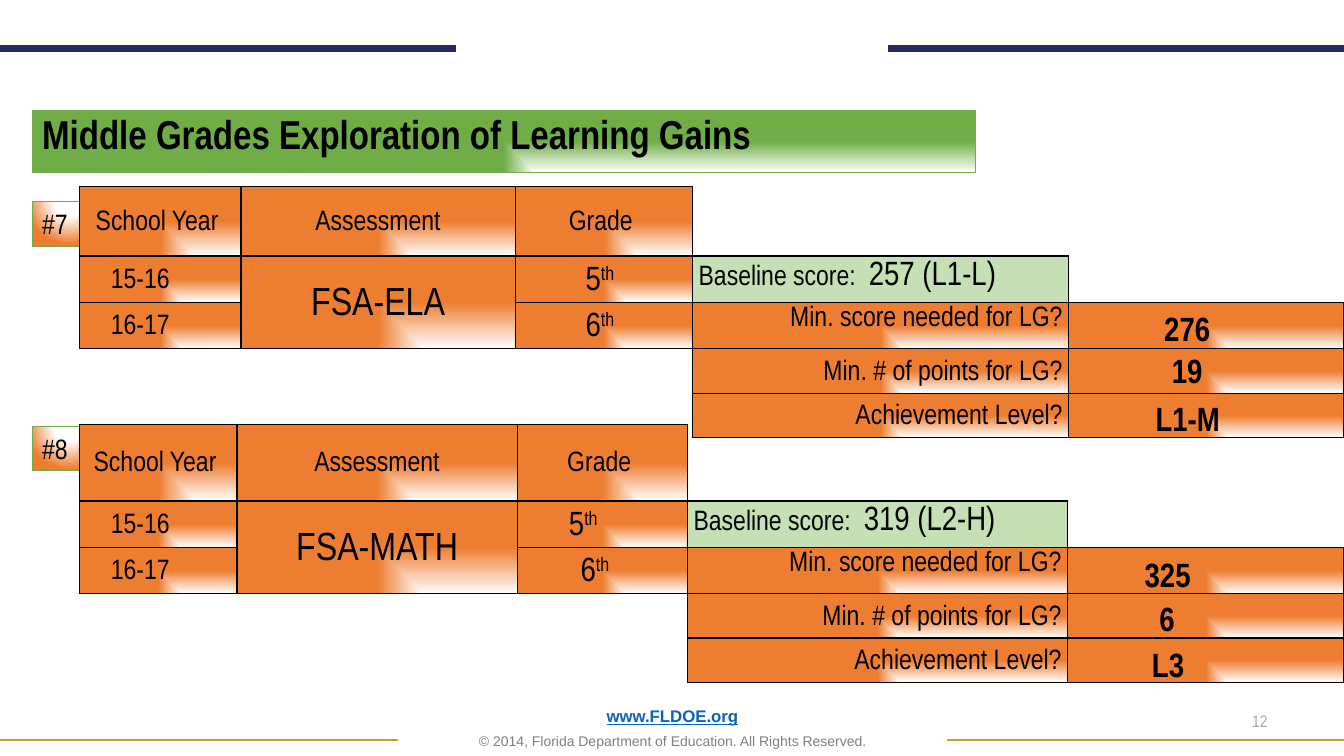
from lxml import etree
from pptx import Presentation
from pptx.dml.color import RGBColor
from pptx.enum import shapes, text
from pptx.oxml import parse_xml
from pptx.oxml.ns import nsdecls, qn
from pptx.util import Inches, Pt

COLORS = {
    "black": "000000", "white": "FFFFFF", "orange": "ED7D31", "green": "70AD47",
    "pale_green": "C5E0B4", "navy": "262A63", "gold": "CD9D2C",
    "link": "0563C1", "gray": "808080", "light_gray": "A6A6A6",
}
LEFT, CENTER, RIGHT = text.PP_ALIGN.LEFT, text.PP_ALIGN.CENTER, text.PP_ALIGN.RIGHT
TOP, MIDDLE = text.MSO_ANCHOR.TOP, text.MSO_ANCHOR.MIDDLE
CORNER = 'path="rect"', 0, 'l="100000" t="100000"'
GLOW = 'path="circle"', 35000, 'l="50000" t="-80000" r="50000" b="180000"'


def write(p, words, size=20, font="Arial Narrow", color="black", bold=False,
          underline=False, align=LEFT, spacing=1.0, superscript=False):
    """Append one formatted run to the paragraph."""
    p.alignment, p.line_spacing = align, spacing
    r = p.add_run()
    r.text = words
    r.font.name, r.font.size = font, Pt(size)
    r.font.bold, r.font.underline = bold, underline
    r.font.color.rgb = RGBColor.from_string(COLORS[color])
    if superscript:
        r.font._element.set("baseline", "30000")


def add_gradient(parent, color, style):
    """Append a path gradient that runs from white to the colour."""
    kind, white_end, focus = style
    stops = "".join(
        f'<a:gs pos="{pos}"><a:srgbClr val="{COLORS[name]}"/></a:gs>'
        for pos, name in ((0, "white"), (white_end, "white"), (100000, color)))
    parent.append(parse_xml(
        f'<a:gradFill {nsdecls("a")} rotWithShape="1"><a:gsLst>{stops}</a:gsLst>'
        f'<a:path {kind}><a:fillToRect {focus}/></a:path></a:gradFill>'))


prs = Presentation()
prs.slide_width, prs.slide_height = Inches(13.33), Inches(7.5)
s = prs.slides.add_slide(prs.slide_layouts[6])

# Rules at the top and bottom
for x1, x2, y, color, width in (
        (0, 3.95, 7.34, "gold", 1), (0, 4.52, 0.48, "navy", 5),
        (8.81, 13.33, 0.48, "navy", 5), (9.39, 13.33, 7.34, "gold", 1)):
    rule = s.shapes.add_connector(shapes.MSO_CONNECTOR.STRAIGHT,
                                  Inches(x1), Inches(y), Inches(x2), Inches(y))
    rule.line.color.rgb = RGBColor.from_string(COLORS[color])
    rule.line.width = Pt(width)
    etree.SubElement(rule._element.spPr, qn("a:effectLst"))

# Footer and page number
tf = s.shapes.add_textbox(Inches(0.92), Inches(7.06), Inches(11.5), Inches(0.43)).text_frame
tf.word_wrap, tf.vertical_anchor = True, text.MSO_ANCHOR.BOTTOM
write(tf.paragraphs[0], "www.FLDOE.org", size=12, font="Arial", color="link",
      bold=True, underline=True, align=CENTER, spacing=0.9)
p = tf.add_paragraph()
p.space_before = Pt(6)
write(p, "© 2014, Florida Department of Education. All Rights Reserved.",
      size=10, font="Arial", color="gray", align=CENTER, spacing=0.9)

tf = s.shapes.add_textbox(Inches(9.56), Inches(6.95), Inches(3.11), Inches(0.4)).text_frame
tf.word_wrap, tf.vertical_anchor = True, MIDDLE
write(tf.paragraphs[0], "12", size=12, color="light_gray", align=RIGHT)

# Title bar and problem numbers
for words, y, width, height, color, style, line, fmt in (
        ("Middle Grades Exploration of Learning Gains", 1.09, 9.35, 0.62, "green", CORNER,
         0.5, dict(size=28.8, bold=True, spacing=0.9)),
        ("#7", 2, 0.73, 0.44, "orange", GLOW, 0.5, {}),
        ("#8", 4.23, 0.73, 0.44, "orange", GLOW, 0.75, {})):
    sp = s.shapes.add_shape(shapes.MSO_SHAPE.RECTANGLE, Inches(0.32), Inches(y),
                            Inches(width), Inches(height))
    add_gradient(sp._element.spPr, color, style)
    sp.line.color.rgb = RGBColor.from_string(COLORS["green"])
    sp.line.width = Pt(line)
    sp.shadow.inherit = False
    sp.text_frame.word_wrap, sp.text_frame.vertical_anchor = True, TOP
    write(sp.text_frame.paragraphs[0], words, **fmt)

# One table per problem, with its answers laid over the last column
problems = (
    dict(top=1.85, header=0.69, cols=(1.6, 2.72, 1.76, 3.73, 2.73), subject="FSA-ELA",
         baseline="257 (L1-L)", grade_margins=(0.14, 0.14),
         answers=(("276", 11.21, 3.01, 1.13), ("19", 11.21, 3.42, 1.13),
                  ("L1-M", 11.29, 3.9, 0.98))),
    dict(top=4.21, header=0.76, cols=(1.56, 2.78, 1.69, 3.77, 2.74), subject="FSA-MATH",
         baseline="319 (L2-H)", grade_margins=(0.44, 0.21),
         answers=(("325", 11.09, 5.45, 0.98), ("6", 11.01, 5.88, 1.13),
                  ("L3", 11.13, 6.34, 0.91))),
)
EMPTY = {(0, 3), (0, 4), (1, 4)} | {(row, col) for row in (3, 4) for col in range(3)}
NO_STYLE = "{2D5ABB26-0587-4C30-8999-92F81FD0307C}"

for problem in problems:
    heights = (problem["header"], 0.46, 0.46, 0.44, 0.44)
    table = s.shapes.add_table(5, 5, Inches(0.79), Inches(problem["top"]),
                               Inches(sum(problem["cols"])), Inches(sum(heights))).table
    table.first_row = table.horz_banding = False
    table._tbl.tblPr.find(qn("a:tableStyleId")).text = NO_STYLE
    for column, width in zip(table.columns, problem["cols"]):
        column.width = Inches(width)
    for row, height in zip(table.rows, heights):
        row.height = Inches(height)

    for row in range(5):
        for col in range(5):
            cell = table.cell(row, col)
            cell.margin_left = cell.margin_right = Inches(0.06)
            cell.margin_top = cell.margin_bottom = 0
            cell.vertical_anchor = TOP if col == 3 and row < 3 else MIDDLE
            if (row, col) in EMPTY:
                continue
            tcPr = cell._tc.get_or_add_tcPr()
            for side in "LRTB":
                tcPr.append(parse_xml(
                    f'<a:ln{side} {nsdecls("a")} w="12700"><a:solidFill>'
                    f'<a:srgbClr val="{COLORS["black"]}"/></a:solidFill></a:ln{side}>'))
            if (row, col) == (1, 3):
                cell.fill.solid()
                cell.fill.fore_color.rgb = RGBColor.from_string(COLORS["pale_green"])
            else:
                add_gradient(tcPr, "orange", CORNER)

    table.cell(1, 1).merge(table.cell(2, 1))
    for row in (3, 4):
        table.cell(row, 0).merge(table.cell(row, 2))

    for row, col, words, size, align in (
            (0, 0, "School Year ", 20, CENTER), (0, 1, "Assessment", 20, CENTER),
            (0, 2, "Grade ", 20, CENTER), (1, 0, "15-16", 20, LEFT),
            (2, 0, "16-17", 20, LEFT), (1, 1, problem["subject"], 28, CENTER),
            (1, 2, "5", 24, CENTER), (2, 2, "6", 24, CENTER),
            (1, 3, "Baseline score:  ", 20, LEFT),
            (2, 3, "Min. score needed for LG?", 20, RIGHT),
            (3, 3, "Min. # of points for LG?", 20, RIGHT),
            (4, 3, "Achievement Level?", 20, RIGHT)):
        write(table.cell(row, col).text_frame.paragraphs[0], words, size=size,
              align=align, spacing=1.15)
    write(table.cell(1, 3).text_frame.paragraphs[0], problem["baseline"], size=24, spacing=1.15)
    for row, margin in enumerate(problem["grade_margins"], 1):
        table.cell(row, 0).margin_left = Inches(0.31)
        grade = table.cell(row, 2)
        grade.margin_right = Inches(margin)
        write(grade.text_frame.paragraphs[0], "th", size=24, align=CENTER,
              spacing=1.15, superscript=True)

    for answer, x, y, width in problem["answers"]:
        tf = s.shapes.add_textbox(Inches(x), Inches(y), Inches(width), Inches(0.5)).text_frame
        tf.word_wrap = True
        write(tf.paragraphs[0], answer, size=24, bold=True, align=CENTER)

prs.save("out.pptx")
